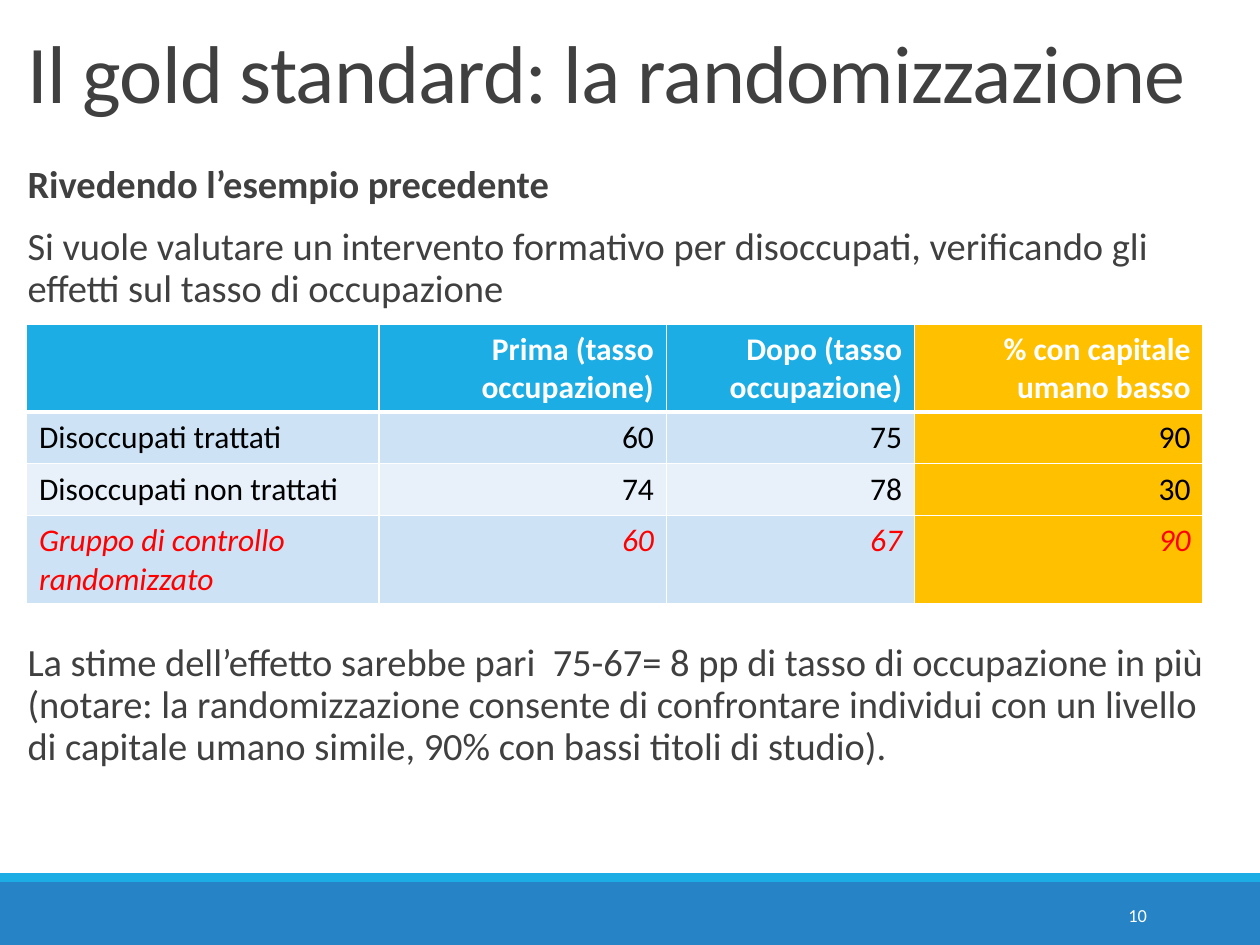
import pptx
import pptx.dml.color
import pptx.enum.shapes
import pptx.enum.text
import pptx.util
from dataclasses import dataclass
from lxml import etree
from pptx.util import Inches


@dataclass(frozen=True)
class Theme:
    font: str = "Calibri"
    text: str = "404040"
    black: str = "000000"
    white: str = "FFFFFF"
    red: str = "FF0000"
    blue: str = "2683C6"
    cyan: str = "1CADE4"
    amber: str = "FFC000"
    band_dark: str = "CDE3F5"
    band_light: str = "E8F1FA"
    title_size: float = 46.8
    body_size: float = 22
    table_size: float = 18
    number_size: float = 10.5


theme = Theme()
rgb = pptx.dml.color.RGBColor.from_string
ALIGN = pptx.enum.text.PP_ALIGN
ANCHOR = pptx.enum.text.MSO_ANCHOR


def style(para, size, color, bold=False, italic=False):
    font = para.font
    font.name, font.size = theme.font, pptx.util.Pt(size)
    font.bold, font.italic = bold, italic
    font.color.rgb = rgb(color)


def add_text(left, top, width, height, texts, size, color, anchor=ANCHOR.TOP):
    """Add a wrapping text box and return its paragraphs."""
    box = page.shapes.add_textbox(Inches(left), Inches(top), Inches(width), Inches(height))
    frame = box.text_frame
    frame.word_wrap = True
    frame.vertical_anchor = anchor
    frame.text = "\n".join(texts)
    for para in frame.paragraphs:
        style(para, size, color)
    return frame.paragraphs


deck = pptx.Presentation()
deck.slide_width, deck.slide_height = Inches(10), Inches(7.5)
page = deck.slides.add_slide(deck.slide_layouts[6])

# Footer bands and page number
for top, height, color in ((7, 0.5, theme.blue), (6.93, 0.07, theme.cyan)):
    band = page.shapes.add_shape(pptx.enum.shapes.MSO_SHAPE.RECTANGLE,
                                 Inches(0), Inches(top), Inches(10), Inches(height))
    band.shadow.inherit = False
    band.fill.solid()
    band.fill.fore_color.rgb = rgb(color)
    band.line.fill.background()

number = add_text(8.12, 7.06, 1.08, 0.4, ["10"], theme.number_size, theme.white, ANCHOR.MIDDLE)[0]
number.alignment = ALIGN.RIGHT

# Body text above and below the table
intro = add_text(0.12, 1.26, 9.45, 1.3, [
    "Rivedendo l’esempio precedente",
    "Si vuole valutare un intervento formativo per disoccupati, verificando gli effetti sul tasso di occupazione",
], theme.body_size, theme.text)
intro[0].font.bold = True
conclusion = add_text(0.12, 5.06, 9.55, 1.2, [
    "La stime dell’effetto sarebbe pari  75-67= 8 pp di tasso di occupazione in più "
    "(notare: la randomizzazione consente di confrontare individui con un livello "
    "di capitale umano simile, 90% con bassi titoli di studio).",
], theme.body_size, theme.text)
for para in (*intro, *conclusion):
    para.line_spacing = 0.9
    para.space_after = pptx.util.Pt(12)

# Employment table
rows = [
    ("", "Prima (tasso occupazione)", "Dopo (tasso occupazione)", "% con capitale umano basso"),
    ("Disoccupati trattati", "60", "75", "90"),
    ("Disoccupati non trattati", "74", "78", "30"),
    ("Gruppo di controllo randomizzato", "60", "67", "90"),
]
row_fills = (theme.cyan, theme.band_dark, theme.band_light, theme.band_dark)
row_colors = (theme.white, theme.black, theme.black, theme.red)
row_heights = (0.7, 0.41, 0.41, 0.7)
column_widths = (2.8, 2.28, 1.97, 2.29)
table = page.shapes.add_table(len(rows), len(column_widths), Inches(0.21), Inches(2.57),
                              Inches(sum(column_widths)), Inches(sum(row_heights))).table
for column, width in zip(table.columns, column_widths):
    column.width = Inches(width)

for r, texts in enumerate(rows):
    table.rows[r].height = Inches(row_heights[r])
    for c, text in enumerate(texts):
        cell = table.cell(r, c)
        cell.text = text
        para = cell.text_frame.paragraphs[0]
        style(para, theme.table_size, row_colors[r], bold=r == 0, italic=r == 3)
        para.alignment = ALIGN.RIGHT if c else ALIGN.LEFT
        properties = cell._tc.get_or_add_tcPr()
        for side in "LRTB":
            thick = (r == 0 and side == "B") or (r == 1 and side == "T")
            width = pptx.util.Pt(3 if thick else 1)
            border = etree.SubElement(properties, pptx.oxml.ns.qn(f"a:ln{side}"), w=str(width))
            fill = etree.SubElement(border, pptx.oxml.ns.qn("a:solidFill"))
            etree.SubElement(fill, pptx.oxml.ns.qn("a:srgbClr"), val=theme.white)
        cell.fill.solid()
        cell.fill.fore_color.rgb = rgb(theme.amber if c == 3 else row_fills[r])

# Title, with slightly tightened letters
title = add_text(0.12, 0.21, 9.61, 0.79, ["Il gold standard: la randomizzazione"],
                 theme.title_size, theme.text, ANCHOR.BOTTOM)[0]
title.line_spacing = 0.85
title.runs[0].font._element.set("spc", "-50")

deck.save("out.pptx")
